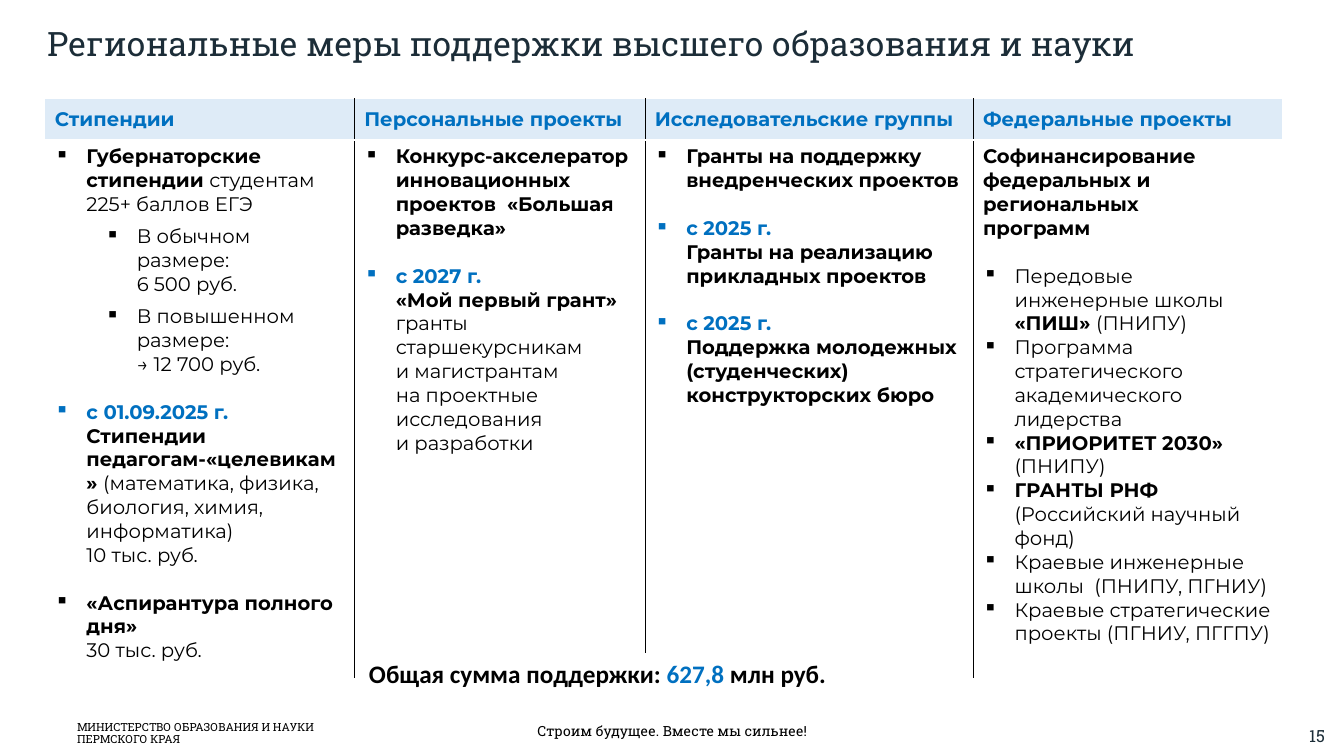
from dataclasses import dataclass

from lxml.etree import SubElement
from pptx import Presentation
from pptx.dml.color import RGBColor
from pptx.enum.shapes import MSO_SHAPE as Shape
from pptx.enum.text import MSO_ANCHOR as Anchor, PP_ALIGN as Align
from pptx.oxml import parse_xml
from pptx.oxml.ns import nsdecls, qn
from pptx.util import Pt


@dataclass(frozen=True)
class Theme:
    ink: str = "000000"
    heading: str = "1C2D38"
    accent: str = "0070C0"
    band: str = "DEEBF7"
    paper: str = "FFFFFF"
    slab: str = "Roboto Slab"
    sans: str = "Montserrat"
    total: str = "Calibri"
    title_size: int = 24
    total_size: int = 18
    table_size: int = 14
    number_size: int = 12
    motto_size: int = 10
    ministry_size: int = 8


THEME = Theme()
GAP = 17  # one line of table text
HANG = 22.5
COLUMN_WIDTHS = (221, 207.5, 234.5, 221)
ROW_HEIGHTS = (29.5, 385)


def plain(text):
    return text, False, THEME.ink


def bold(text):
    return text, True, THEME.ink


def accent(text):
    return text, True, THEME.accent


@dataclass(frozen=True)
class Item:
    runs: tuple
    before: float = 0
    level: int = 0
    bullet: bool = True


def item(*runs, **options):
    return Item(runs, **options)


MEASURES = {
    "Стипендии": (
        item(bold("Губернаторские стипендии "), plain("студентам 225+ баллов ЕГЭ")),
        item(plain("В обычном размере:\n6 500 руб."), before=6, level=1),
        item(plain("В повышенном размере:\n→ 12 700 руб."), before=6, level=1),
        item(accent("с 01.09.2025 г.\n"), bold("Стипендии педагогам-«целевикам» "),
             plain("(математика, физика, биология, химия, информатика)\n10 тыс. руб."),
             before=GAP),
        item(bold("«Аспирантура полного дня»\n"), plain("30 тыс. руб."), before=GAP),
    ),
    "Персональные проекты": (
        item(bold("Конкурс-акселератор инновационных проектов  «Большая разведка»")),
        item(accent("с 2027 г.\n"), bold("«Мой первый грант» "),
             plain("гранты старшекурсникам\nи магистрантам\n"
                   "на проектные исследования\nи разработки"), before=GAP),
    ),
    "Исследовательские группы": (
        item(bold("Гранты на поддержку внедренческих проектов")),
        item(accent("с 2025 г.\n"), bold("Гранты на реализацию прикладных проектов"),
             before=GAP),
        item(accent("с 2025 г.\n"),
             bold("Поддержка молодежных (студенческих) конструкторских бюро"), before=GAP),
    ),
    "Федеральные проекты": (
        item(bold("Софинансирование федеральных и региональных"), bullet=False),
        item(bold("программ"), bullet=False),
        item(plain("Передовые инженерные школы "), bold("«ПИШ» "), plain("(ПНИПУ)"),
             before=GAP),
        item(plain("Программа стратегического академического лидерства")),
        item(bold("«ПРИОРИТЕТ 2030» "), plain("(ПНИПУ)")),
        item(bold("ГРАНТЫ РНФ \n"), plain("(Российский научный фонд)")),
        item(plain("Краевые инженерные школы  (ПНИПУ, ПГНИУ)")),
        item(plain("Краевые стратегические проекты (ПГНИУ, ПГГПУ)")),
    ),
}


def rgb(colour):
    return RGBColor.from_string(colour)


def add_runs(paragraph, runs, font, size):
    """Write (text, bold, colour) runs; a newline becomes a line break."""
    for text, is_bold, colour in runs:
        for number, line in enumerate(text.split("\n")):
            if number:
                paragraph.add_line_break()
            if line:
                run = paragraph.add_run()
                run.text = line
                for name, value in {"name": font, "size": Pt(size), "bold": is_bold}.items():
                    setattr(run.font, name, value)
                run.font.color.rgb = rgb(colour)


def add_bullet(paragraph, level):
    properties = paragraph._p.get_or_add_pPr()
    properties.set("marL", str(Pt(HANG + 36 * level)))
    properties.set("indent", str(-Pt(HANG)))
    SubElement(properties, qn("a:buChar")).set("char", "▪")


def write_line(shape, runs, font, size, align=Align.LEFT, anchor=Anchor.MIDDLE, spacing=0.9):
    frame = shape.text_frame
    frame.word_wrap = True
    frame.vertical_anchor = anchor
    paragraph = frame.paragraphs[0]
    for name, value in {"alignment": align, "line_spacing": spacing,
                        "space_before": Pt(0)}.items():
        setattr(paragraph, name, value)
    add_runs(paragraph, runs, font, size)


def add_title(slide, text):
    title = slide.shapes.title
    for name, value in {"left": 26.5, "top": 4.5, "width": 903.5, "height": 56}.items():
        setattr(title, name, Pt(value))
    write_line(title, [(text, False, THEME.heading)], THEME.slab, THEME.title_size)


def add_label(slide, box, text, size, colour=THEME.ink, **layout):
    label = slide.shapes.add_textbox(*map(Pt, box))
    write_line(label, [(text, False, colour)], THEME.slab, size, **layout)


def add_total(slide, box, runs):
    panel = slide.shapes.add_shape(Shape.RECTANGLE, *map(Pt, box))
    panel.shadow.inherit = False
    panel.fill.solid()
    panel.fill.fore_color.rgb = rgb(THEME.paper)
    panel.line.fill.background()
    write_line(panel, runs, THEME.total, THEME.total_size, anchor=Anchor.TOP, spacing=1)


def set_borders(cell, is_first, is_last):
    """Rule the inner sides of the columns and leave the rest paper-white."""
    outer, inner = (THEME.paper, 1), (THEME.ink, 0.25)
    sides = {"lnL": outer if is_first else inner, "lnR": outer if is_last else inner,
             "lnT": outer, "lnB": outer}
    properties = cell._tc.get_or_add_tcPr()
    for place, (side, (colour, width)) in enumerate(sides.items()):
        properties.insert(place, parse_xml(
            f'<a:{side} {nsdecls("a")} w="{Pt(width)}"><a:solidFill>'
            f'<a:srgbClr val="{colour}"/></a:solidFill></a:{side}>'))


def fill_cell(cell, items):
    for number, entry in enumerate(items):
        frame = cell.text_frame
        paragraph = frame.add_paragraph() if number else frame.paragraphs[0]
        paragraph.level = entry.level
        if entry.bullet:
            add_bullet(paragraph, entry.level)
        paragraph.space_before = Pt(entry.before)
        add_runs(paragraph, entry.runs, THEME.sans, THEME.table_size)


def add_measures(slide, left, top):
    table = slide.shapes.add_table(
        len(ROW_HEIGHTS), len(COLUMN_WIDTHS), Pt(left), Pt(top),
        Pt(sum(COLUMN_WIDTHS)), Pt(sum(ROW_HEIGHTS))).table
    table.first_row = table.horz_banding = False
    for row, height in zip(table.rows, ROW_HEIGHTS):
        row.height = Pt(height)
    for index, (heading, items) in enumerate(MEASURES.items()):
        table.columns[index].width = Pt(COLUMN_WIDTHS[index])
        head, body = table.cell(0, index), table.cell(1, index)
        head.vertical_anchor = Anchor.MIDDLE
        head.fill.solid()
        head.fill.fore_color.rgb = rgb(THEME.band)
        body.fill.background()
        fill_cell(head, [item(accent(heading), bullet=False)])
        fill_cell(body, items)
        for cell in (head, body):
            set_borders(cell, index == 0, index == len(MEASURES) - 1)


def main():
    deck = Presentation()
    deck.slide_width, deck.slide_height = Pt(960), Pt(540)
    slide = deck.slides.add_slide(deck.slide_layouts[5])
    add_title(slide, "Региональные меры поддержки высшего образования и науки")
    add_measures(slide, 32, 70.5)
    add_total(slide, (256.5, 466.5, 421, 29),
              [bold("Общая сумма поддержки: "), accent("627,8 "), bold("млн руб.")])
    add_label(slide, (48, 511, 199, 27), "МИНИСТЕРСТВО ОБРАЗОВАНИЯ И НАУКИ ПЕРМСКОГО КРАЯ",
              THEME.ministry_size)
    add_label(slide, (256.5, 507, 447, 32), "Строим будущее. Вместе мы сильнее!",
              THEME.motto_size, align=Align.CENTER)
    add_label(slide, (911, 515, 42.5, 21.5), "15", THEME.number_size, THEME.heading,
              align=Align.RIGHT, anchor=Anchor.TOP, spacing=1)
    deck.save("out.pptx")


if __name__ == "__main__":
    main()
